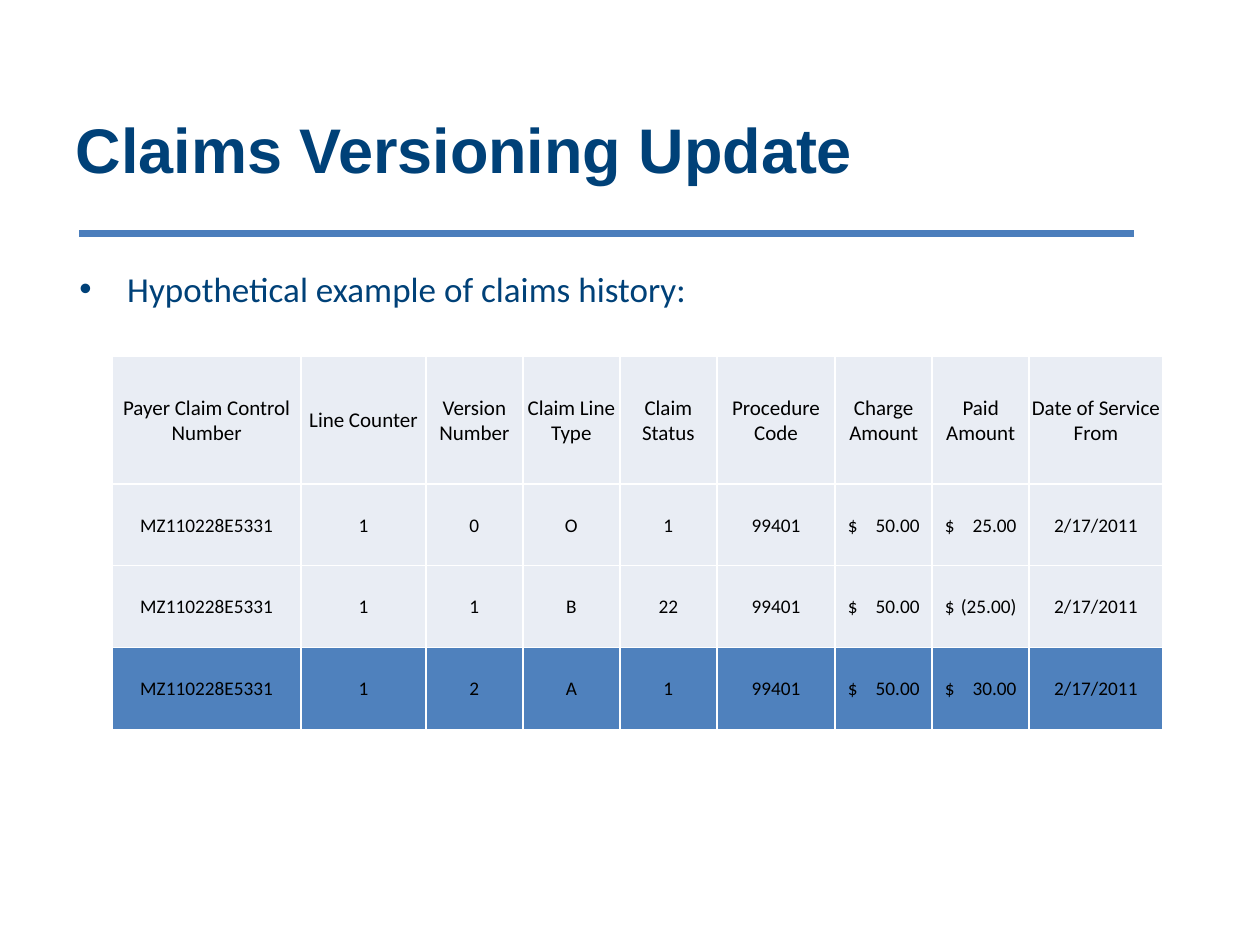
from dataclasses import dataclass

from lxml import etree
from pptx import Presentation
from pptx import util as u
from pptx.dml.color import RGBColor
from pptx.enum import shapes, text
from pptx.oxml import ns

GRID_COLS, GRID_ROWS = 100, 75
CELL = u.Inches(0.1)  # one grid square


@dataclass(frozen=True)
class Theme:
    ink: str = "004178"
    rule: str = "4B7EBC"
    cell: str = "E9EDF4"
    current: str = "4F81BD"
    border: str = "FFFFFF"
    cell_ink: str = "000000"
    title_font: str = "Arial"
    body_font: str = "Calibri"
    title_size: float = 36
    body_size: float = 20
    head_size: float = 12
    data_size: float = 11


@dataclass(frozen=True)
class Box:
    """Left, top, width and height in grid squares."""
    left: float
    top: float
    width: float
    height: float


@dataclass(frozen=True)
class Column:
    heading: str
    width: float  # grid squares
    values: tuple
    money: bool = False


THEME = Theme()
CLAIM, DAY = "MZ110228E5331", "2/17/2011"
COLUMNS = [
    Column("Payer Claim Control Number", 15, (CLAIM,) * 3),
    Column("Line Counter", 9.9, ("1",) * 3),
    Column("Version Number", 7.7, ("0", "1", "2")),
    Column("Claim Line Type", 7.7, ("O", "B", "A")),
    Column("Claim Status", 7.7, ("1", "22", "1")),
    Column("Procedure Code", 9.4, ("99401",) * 3),
    Column("Charge Amount", 7.7, ("50.00",) * 3, money=True),
    Column("Paid Amount", 7.7, ("25.00", "(25.00)", "30.00"), money=True),
    Column("Date of Service From", 10.6, (DAY,) * 3),
]
ROW_HEIGHTS = [10.1, 6.5, 6.5, 6.5]


def grid(n: float) -> int:
    return round(n * CELL)


def add_xml(parent, tag: str, **attrs: str):
    return etree.SubElement(parent, ns.qn(tag), attrs)


def style_runs(p, font: str, size: float, color: str, bold: bool = False) -> None:
    for r in p.runs:
        r.font.name, r.font.size, r.font.bold = font, u.Pt(size), bold
        r.font.color.rgb = RGBColor.from_string(color)


def fill_placeholder(sp, box: Box, words: str, anchor):
    sp.left, sp.top = grid(box.left), grid(box.top)
    sp.width, sp.height = grid(box.width), grid(box.height)
    tf = sp.text_frame
    tf.text = words
    tf.word_wrap, tf.auto_size = True, text.MSO_AUTO_SIZE.NONE
    tf.vertical_anchor = anchor
    p = tf.paragraphs[0]
    p.alignment = text.PP_ALIGN.LEFT
    p.space_before = u.Pt(0)
    return p


def add_bullet(p, color: str) -> None:
    pPr = p._p.get_or_add_pPr()
    indent = u.Inches(0.38)
    pPr.set("marL", str(indent))
    pPr.set("indent", str(-indent))
    add_xml(add_xml(pPr, "a:buClr"), "a:srgbClr", val=color)
    add_xml(pPr, "a:buFont", typeface="Arial")
    add_xml(pPr, "a:buChar", char="•")


def add_rule(s, left: float, right: float, y: float) -> None:
    line = s.shapes.add_connector(
        shapes.MSO_CONNECTOR.STRAIGHT, grid(left), grid(y), grid(right), grid(y))
    line.line.color.rgb = RGBColor.from_string(THEME.rule)
    line.line.width = u.Pt(4)
    add_xml(line._element.spPr, "a:effectLst")


def format_cell(cell, words: str, size: float, fill: str, money: bool) -> None:
    cell.margin_left = cell.margin_right = cell.margin_top = u.Inches(0.01)
    cell.margin_bottom = 0
    cell.vertical_anchor = text.MSO_ANCHOR.MIDDLE
    p = cell.text_frame.paragraphs[0]
    if money:  # dollar sign at the left, amount on a right tab
        cell.margin_left = u.Inches(0.1)
        p.alignment = text.PP_ALIGN.LEFT
        tabs = add_xml(p._p.get_or_add_pPr(), "a:tabLst")
        add_xml(tabs, "a:tab", pos=str(u.Inches(0.57)), algn="r")
        p.text = f"$\t{words}"
    else:
        p.alignment = text.PP_ALIGN.CENTER
        p.text = words
    style_runs(p, THEME.body_font, size, THEME.cell_ink)
    tcPr = cell._tc.get_or_add_tcPr()
    for side in ("a:lnL", "a:lnR", "a:lnT", "a:lnB"):
        ln = add_xml(tcPr, side, w=str(u.Pt(1)))
        add_xml(add_xml(ln, "a:solidFill"), "a:srgbClr", val=THEME.border)
    cell.fill.solid()
    cell.fill.fore_color.rgb = RGBColor.from_string(fill)


def add_claims_table(s, left: float, top: float) -> None:
    width = sum(c.width for c in COLUMNS)
    table = s.shapes.add_table(
        len(ROW_HEIGHTS), len(COLUMNS), grid(left), grid(top),
        grid(width), grid(sum(ROW_HEIGHTS))).table
    table.first_row = table.horz_banding = False
    for row, height in zip(table.rows, ROW_HEIGHTS):
        row.height = grid(height)
    last = len(ROW_HEIGHTS) - 1
    for j, col in enumerate(COLUMNS):
        table.columns[j].width = grid(col.width)
        for i, words in enumerate((col.heading, *col.values)):
            size = THEME.data_size if i else THEME.head_size
            fill = THEME.current if i == last else THEME.cell
            format_cell(table.cell(i, j), words, size, fill, col.money and i > 0)


def main() -> None:
    prs = Presentation()
    prs.slide_width, prs.slide_height = grid(GRID_COLS), grid(GRID_ROWS)
    s = prs.slides.add_slide(prs.slide_layouts[0])

    # Title and rule
    p = fill_placeholder(s.shapes.title, Box(5, 6.2, 85, 11.1),
                         "Claims Versioning Update", text.MSO_ANCHOR.MIDDLE)
    style_runs(p, THEME.title_font, THEME.title_size, THEME.ink, bold=True)
    add_rule(s, 6.3, 90, 18.5)

    # Introductory bullet
    p = fill_placeholder(s.placeholders[1], Box(5.3, 20.7, 84.9, 45),
                         "Hypothetical example of claims history:", text.MSO_ANCHOR.TOP)
    add_bullet(p, THEME.ink)
    style_runs(p, THEME.body_font, THEME.body_size, THEME.ink)

    # Claims history, latest version highlighted
    add_claims_table(s, 8.9, 28.3)
    prs.save("out.pptx")


if __name__ == "__main__":
    main()
